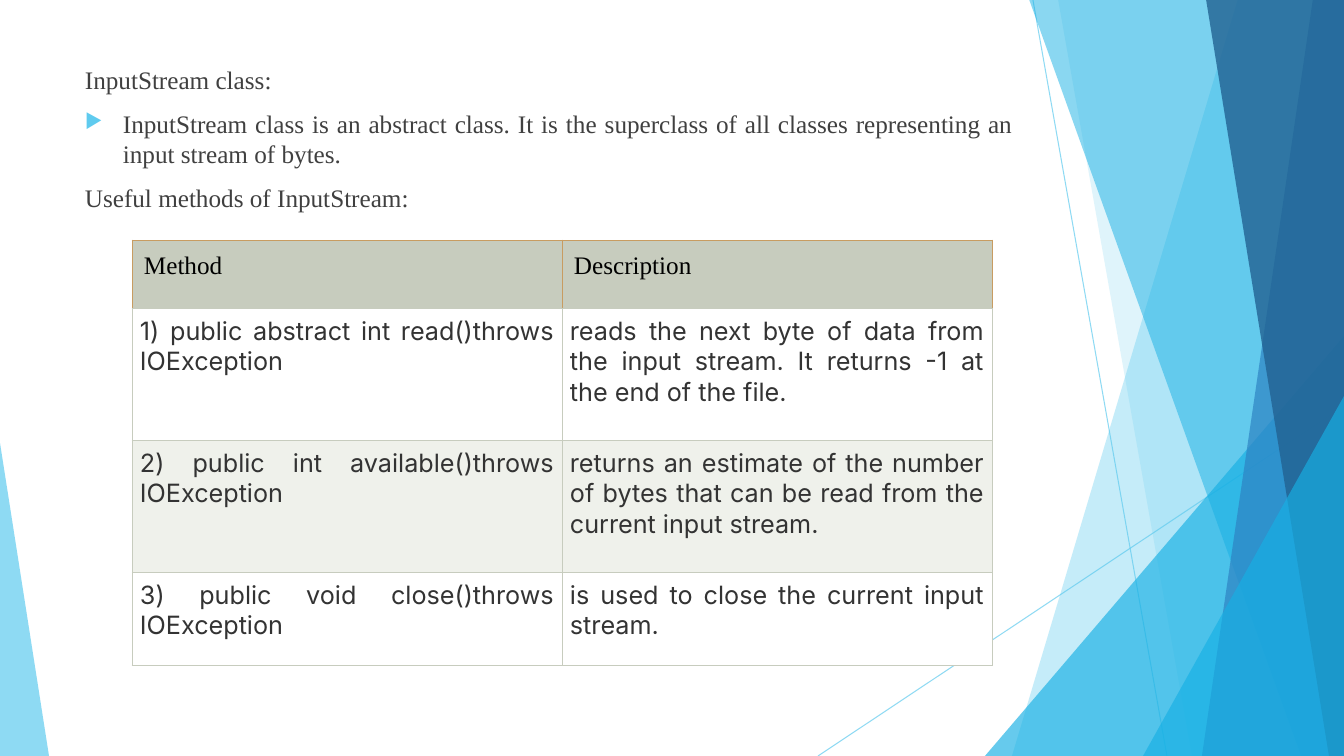
import pptx
import pptx.util
import pptx.dml.color
import pptx.enum.shapes
import pptx.enum.text
import pptx.oxml
import pptx.oxml.ns
import lxml.etree

SLIDE_W, SLIDE_H = 1344, 756
EMU_PER_PX = 12192000 / SLIDE_W
SERIF, SANS = "Times New Roman", "Inter"
COLORS = {
    "sky": "5FCBEF", "cyan": "17B0E4", "blue": "2E83C3", "navy": "226292",
    "body": "404040", "black": "000000", "cell": "333333",
    "sage": "C7CCBE", "pale": "EFF1EB", "white": "FFFFFF", "tan": "C89C61",
}

LINES = [(1033, 0, 1167, 756), (1344, 406, 818, 756)]
FACETS = [
    ("band", (1238, 1012), "sky", 36),
    ("band", (1058, 1192), "sky", 20),
    ("triangle", (985, 336, 359, 420, 1), "cyan", 66),
    ("band", (1029, 1301), "cyan", 50),
    ("band", (1313, 1202), "blue", 70),
    ("band", (1206, 1329), "navy", 80),
    ("triangle", (1143, 396, 201, 360, 1), "cyan", 66),
    ("triangle", (0, 443, 49, 313, 0), "sky", 70),
]
BODY_BOX = (75, 59, 948, 606)
BODY = [
    ("InputStream class:", False),
    ("InputStream class is an abstract class. It is the superclass of all classes "
     "representing an input stream of bytes.", True),
    ("Useful methods of InputStream:", False),
]
TABLE_AT = (132, 240)
COL_W = 430
ROW_H = [68, 132, 132, 94]
ROWS = [
    ("Method", "Description"),
    ("1) public abstract int read()throws IOException",
     "reads the next byte of data from the input stream. It returns -1 at the end of the file."),
    ("2) public int available()throws IOException",
     "returns an estimate of the number of bytes that can be read from the current input stream."),
    ("3) public void close()throws IOException",
     "is used to close the current input stream."),
]


def px(n):
    return pptx.util.Emu(round(n * EMU_PER_PX))


def rgb(name):
    return pptx.dml.color.RGBColor.from_string(COLORS[name])


def add_xml(parent, tag, **attrs):
    return lxml.etree.SubElement(parent, pptx.oxml.ns.qn(tag), attrs)


def set_alpha(fill_xml, percent):
    color = next(fill_xml.iter(pptx.oxml.ns.qn("a:srgbClr")))
    add_xml(color, "a:alpha", val=str(percent * 1000))


def style_runs(p, font, color):
    for r in p.runs:
        r.font.name = font
        r.font.size = pptx.util.Pt(18)
        r.font.color.rgb = rgb(color)


def add_line(slide, ends):
    line = slide.shapes.add_connector(
        pptx.enum.shapes.MSO_CONNECTOR.STRAIGHT, *map(px, ends))
    line.line.color.rgb = rgb("sky")
    line.line.width = pptx.util.Pt(0.75)
    sp_pr = line._element.spPr
    set_alpha(sp_pr, 70)
    add_xml(sp_pr, "a:effectLst")


def add_facet(slide, kind, geometry, color, alpha):
    if kind == "band":
        top_x, bottom_x = geometry
        builder = slide.shapes.build_freeform(px(top_x), px(-1))
        corners = [(SLIDE_W, -1), (SLIDE_W, SLIDE_H), (bottom_x, SLIDE_H)]
        builder.add_line_segments([(px(x), px(y)) for x, y in corners], close=True)
        sp = builder.convert_to_shape()
    else:
        *box, apex = geometry
        sp = slide.shapes.add_shape(
            pptx.enum.shapes.MSO_SHAPE.ISOSCELES_TRIANGLE, *map(px, box))
        sp.adjustments[0] = apex
    sp.shadow.inherit = False
    sp.line.fill.background()
    sp.fill.solid()
    sp.fill.fore_color.rgb = rgb(color)
    set_alpha(sp._element.spPr, alpha)


def add_bullet(p):
    p_pr = p._p.get_or_add_pPr()
    p_pr.set("marL", str(px(38)))
    p_pr.set("indent", str(px(-38)))
    add_xml(add_xml(p_pr, "a:buClr"), "a:srgbClr", val=COLORS["sky"])
    add_xml(p_pr, "a:buSzPct", val="80000")
    add_xml(p_pr, "a:buChar", char="▶")


def add_body(slide):
    tf = slide.shapes.add_textbox(*map(px, BODY_BOX)).text_frame
    tf.word_wrap = True
    for i, (text, bulleted) in enumerate(BODY):
        p = tf.add_paragraph() if i else tf.paragraphs[0]
        p.text = text
        p.alignment = pptx.enum.text.PP_ALIGN.JUSTIFY
        p.space_before = pptx.util.Pt(10)
        if bulleted:
            add_bullet(p)
        style_runs(p, SERIF, "body")


def set_borders(cell, is_header):
    tc_pr = cell._tc.get_or_add_tcPr()
    for i, side in enumerate(("lnL", "lnR", "lnT", "lnB")):
        color = "tan" if is_header and side != "lnB" else "sage"
        ln = pptx.oxml.parse_xml(
            f'<a:{side} {pptx.oxml.ns.nsdecls("a")} w="9525"><a:solidFill>'
            f'<a:srgbClr val="{COLORS[color]}"/></a:solidFill></a:{side}>')
        tc_pr.insert(i, ln)


def add_table(slide):
    n_cols = len(ROWS[0])
    table = slide.shapes.add_table(
        len(ROWS), n_cols, *map(px, (*TABLE_AT, COL_W * n_cols, sum(ROW_H)))).table
    for col in table.columns:
        col.width = px(COL_W)
    for i, texts in enumerate(ROWS):
        table.rows[i].height = px(ROW_H[i])
        is_header = i == 0
        fill = "sage" if is_header else ("white" if i % 2 else "pale")
        inset = px(12 if is_header else 8)
        for j, text in enumerate(texts):
            cell = table.cell(i, j)
            cell.margin_left = cell.margin_right = inset
            cell.margin_top = cell.margin_bottom = inset
            cell.fill.solid()
            cell.fill.fore_color.rgb = rgb(fill)
            set_borders(cell, is_header)
            p = cell.text_frame.paragraphs[0]
            p.text = text
            if is_header:
                style_runs(p, SERIF, "black")
                for r in p.runs:
                    r.font.bold = False
            else:
                p.alignment = pptx.enum.text.PP_ALIGN.JUSTIFY
                style_runs(p, SANS, "cell")


def main():
    prs = pptx.Presentation()
    prs.slide_width, prs.slide_height = px(SLIDE_W), px(SLIDE_H)
    slide = prs.slides.add_slide(prs.slide_layouts[6])
    for ends in LINES:
        add_line(slide, ends)
    for facet in FACETS:
        add_facet(slide, *facet)
    add_body(slide)
    add_table(slide)
    prs.save("out.pptx")


if __name__ == "__main__":
    main()
